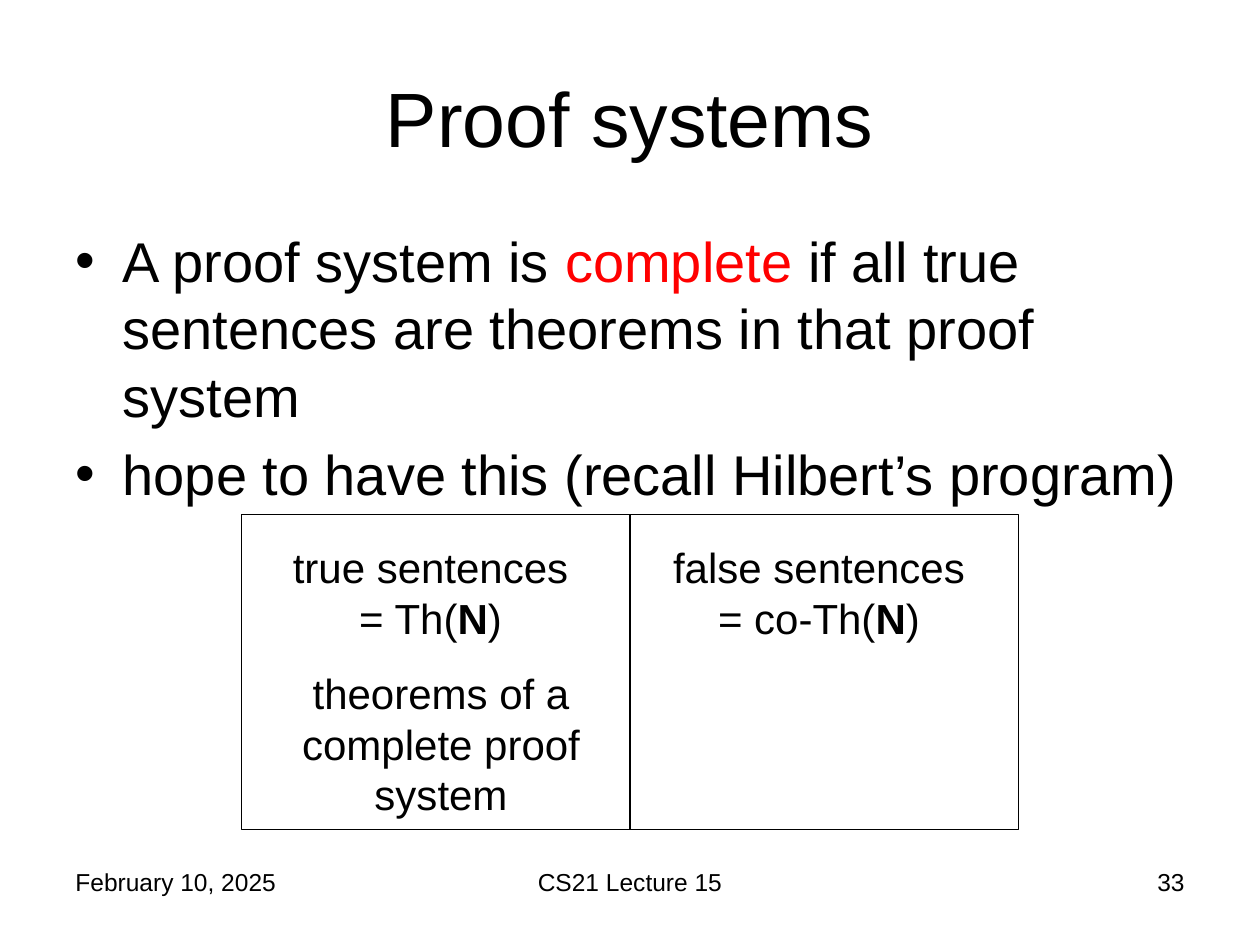
from lxml import etree
from pptx import Presentation
from pptx.dml.color import RGBColor
from pptx.enum.shapes import MSO_SHAPE
from pptx.enum.text import MSO_ANCHOR, PP_ALIGN
from pptx.oxml.ns import qn
from pptx.util import Pt

BLACK = RGBColor(0x00, 0x00, 0x00)
RED = RGBColor(0xFF, 0x00, 0x00)
LEFT, CENTER, RIGHT = PP_ALIGN.LEFT, PP_ALIGN.CENTER, PP_ALIGN.RIGHT
TOP, MIDDLE = MSO_ANCHOR.TOP, MSO_ANCHOR.MIDDLE
RECTANGLE = MSO_SHAPE.RECTANGLE
INDENT = Pt(27)


def set_all(target, values):
    for name, value in values.items():
        setattr(target, name, value)


def add_text(slide, box, paragraphs, size, align=LEFT, anchor=TOP):
    frame = slide.shapes.add_textbox(*map(Pt, box)).text_frame
    set_all(frame, {"word_wrap": True, "vertical_anchor": anchor})
    for index, runs in enumerate(paragraphs):
        paragraph = frame.paragraphs[0] if index == 0 else frame.add_paragraph()
        paragraph.alignment = align
        for words, changes in runs:
            run = paragraph.add_run()
            run.text = words
            look = {"name": "Arial", "size": Pt(size), "bold": False}
            set_all(run.font, {**look, **changes.get("font", {})})
            run.font.color.rgb = changes.get("color", BLACK)
    return frame


def add_title(slide, box):
    add_text(slide, box, [[("Proof systems", {})]], 44, CENTER, MIDDLE)


def add_bullets(slide, box):
    points = [
        [
            ("A proof system is ", {}),
            ("complete ", {"color": RED}),
            ("if all true sentences are theorems in that proof system", {}),
        ],
        [("hope to have this (recall Hilbert’s program)", {})],
    ]
    frame = add_text(slide, box, points, 32)
    for index, paragraph in enumerate(frame.paragraphs):
        if index:
            paragraph.space_before = Pt(6.4)
        properties = paragraph._p.get_or_add_pPr()
        properties.set("marL", str(INDENT))
        properties.set("indent", str(-INDENT))
        etree.SubElement(properties, qn("a:buFont")).set("typeface", "Arial")
        etree.SubElement(properties, qn("a:buChar")).set("char", "•")


def add_sentence_diagram(slide, box):
    left, top, width, height = box
    half = width / 2
    for column in range(2):
        cell = slide.shapes.add_shape(
            RECTANGLE, Pt(left + column * half), Pt(top), Pt(half), Pt(height)
        )
        cell.shadow.inherit = False
        cell.fill.background()
        cell.line.color.rgb = BLACK
        cell.line.width = Pt(0.75)

    for column, start in enumerate(("true sentences = Th(", "false sentences = co-Th(")):
        label = [(start, {}), ("N", {"font": {"bold": True}}), (")", {})]
        label_box = (left + column * half + 12, top + 12, 192, 64.8)
        add_text(slide, label_box, [label], 24, CENTER)

    theorems = [("theorems of a complete proof system", {})]
    add_text(slide, (left + 18, top + 84, 192, 93.6), [theorems], 24, CENTER)


def add_footer(slide, box):
    left, top, width, height = box
    side, middle = 168, 228
    parts = [
        ("February 10, 2025", left, side, LEFT),
        ("CS21 Lecture 15", left + (width - middle) / 2, middle, CENTER),
        ("33", left + width - side, side, RIGHT),
    ]
    for words, part_left, part_width, align in parts:
        part_box = (part_left, top, part_width, height)
        add_text(slide, part_box, [[(words, {})]], 14, align)


def main():
    deck = Presentation()
    set_all(deck, {"slide_width": Pt(720), "slide_height": Pt(540)})
    slide = deck.slides.add_slide(deck.slide_layouts[6])
    add_footer(slide, (36, 492, 648, 37.5))
    add_title(slide, (36, 21.6, 648, 90))
    add_bullets(slide, (36, 126, 648, 356.4))
    add_sentence_diagram(slide, (138, 294, 444, 180))
    deck.save("out.pptx")


if __name__ == "__main__":
    main()
